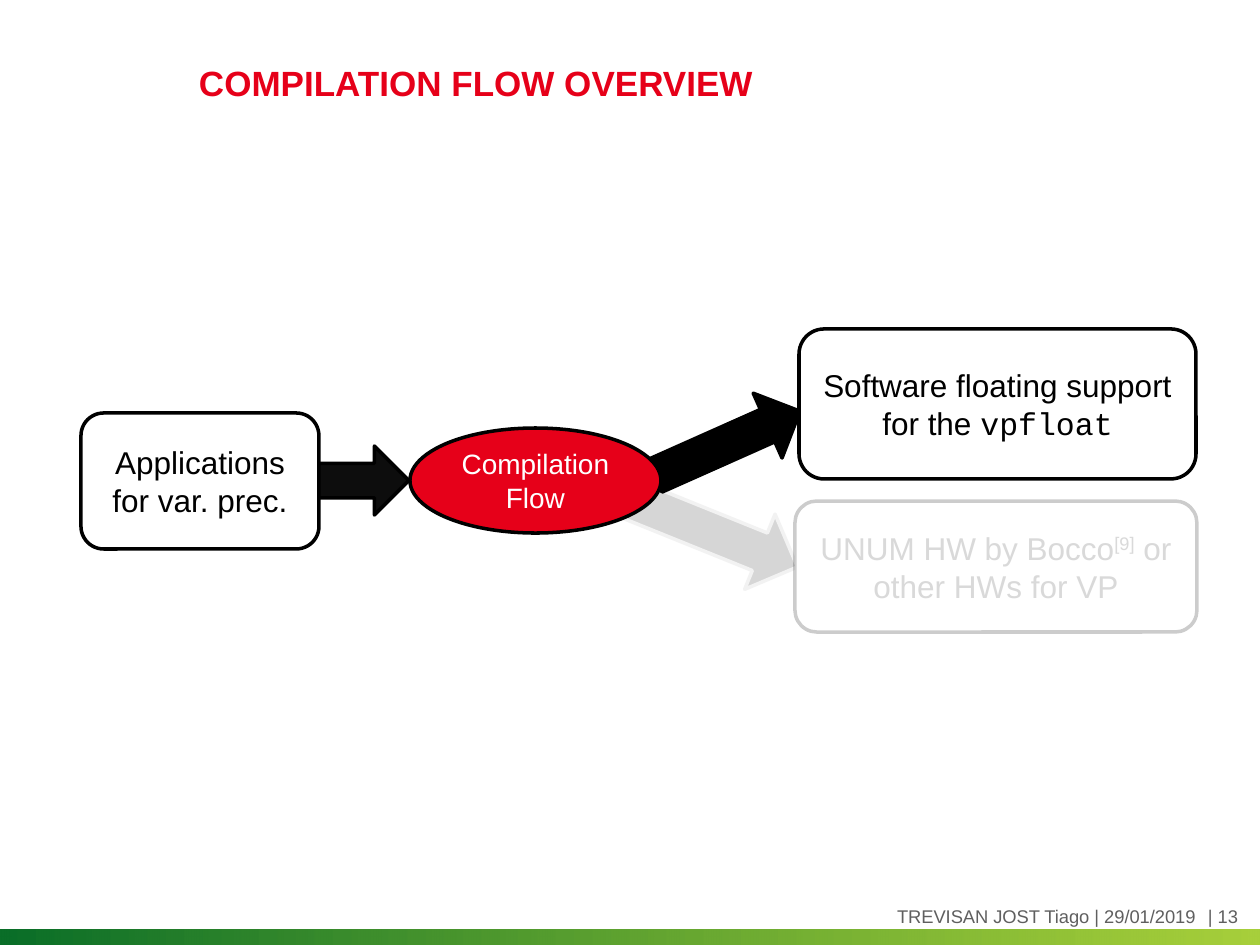
from pptx import Presentation
from pptx.dml.color import RGBColor
from pptx.enum.shapes import MSO_SHAPE as Shape
from pptx.enum.text import MSO_ANCHOR as Anchor, PP_ALIGN as Align
from pptx.oxml.ns import qn
from pptx.util import Emu, Pt
from lxml.etree import SubElement

EMU_PER_PX = 914400 / 126
BLACK, WHITE, RED = "000000", "FFFFFF", "E60019"
PALE, FOOTER_GREY = "D9D9D9", "5F5F5F"


def px(length):
    return Emu(round(length * EMU_PER_PX))


def rgb(value):
    return RGBColor.from_string(value)


def set_alpha(parent, percent):
    """Make the last colour under parent partly transparent."""
    colour = list(parent.iter(qn("a:srgbClr")))[-1]
    SubElement(colour, qn("a:alpha")).set("val", str(percent * 1000))


def write(frame, spans, align=Align.LEFT, **base):
    """Fill a text frame with one paragraph of (text, format) spans."""
    frame.word_wrap = True
    frame.vertical_anchor = Anchor.MIDDLE
    para = frame.paragraphs[0]
    para.alignment = align
    for text, extra in spans:
        span = para.add_run()
        span.text = text
        values = {"name": "Arial", **base, **extra}
        span.font.color.rgb = rgb(values.pop("color"))
        raised = values.pop("raised", None)
        for name, value in values.items():
            setattr(span.font, name, value)
        if raised:
            span.font._element.set("baseline", str(raised * 1000))


def add_label(page, place, text, **values):
    box = page.shapes.add_textbox(*map(px, place))
    frame = box.text_frame
    for side in ("left", "right", "top", "bottom"):
        setattr(frame, f"margin_{side}", 0)
    write(frame, [(text, {})], **values)


def add_node(page, kind, place, fill, line=BLACK, rotation=0,
             fill_alpha=None, line_alpha=None):
    node = page.shapes.add_shape(kind, *map(px, place))
    node.shadow.inherit = False
    node.rotation = rotation
    node.fill.solid()
    node.fill.fore_color.rgb = rgb(fill)
    if fill_alpha:
        set_alpha(node._element.spPr, fill_alpha)
    node.line.color.rgb = rgb(line)
    node.line.width = Pt(2)
    if line_alpha:
        set_alpha(node._element.spPr, line_alpha)
    return node


def add_text_node(page, kind, place, spans, fill=WHITE, size=18,
                  color=BLACK, line_alpha=None):
    node = add_node(page, kind, place, fill, line_alpha=line_alpha)
    write(node.text_frame, spans, Align.CENTER, size=Pt(size), color=color)


def add_bottom_bar(page):
    bar = page.shapes.add_shape(Shape.RECTANGLE, *map(px, (0, 930, 1260, 15)))
    bar.shadow.inherit = False
    bar.line.fill.background()
    bar.fill.gradient()
    bar.fill.gradient_angle = 0
    for stop, colour in zip(bar.fill.gradient_stops, ("0A6E28", "91C30A")):
        stop.color.rgb = rgb(colour)
    set_alpha(bar._element.spPr, 80)


def main():
    deck = Presentation()
    deck.slide_width, deck.slide_height = px(1260), px(945)
    page = deck.slides.add_slide(deck.slide_layouts[6])

    # Footer
    add_bottom_bar(page)
    footer = {"size": Pt(10.5), "color": FOOTER_GREY}
    add_label(page, (1208, 905, 52, 23), "| 13", **footer)
    add_label(page, (0, 905, 1196, 23), "TREVISAN JOST Tiago | 29/01/2019",
              align=Align.RIGHT, **footer)

    # Title
    add_label(page, (199, 29, 1011, 107), "COMPILATION FLOW OVERVIEW",
              size=Pt(20), color=RED, bold=True)

    # Arrows, behind the nodes they join
    add_node(page, Shape.DOWN_ARROW, (668, 435, 81, 192), BLACK, "F2F2F2",
             rotation=292, fill_alpha=16)
    add_node(page, Shape.DOWN_ARROW, (329, 435, 69, 91), "0D0D0D",
             rotation=270)
    add_node(page, Shape.DOWN_ARROW, (692, 364, 71, 159), BLACK, rotation=246)

    # Flow: input, compiler, two targets
    add_text_node(page, Shape.ROUNDED_RECTANGLE, (81, 413, 238, 136),
                  [("Applications for var. prec.", {})])
    add_text_node(page, Shape.OVAL, (410, 428, 251, 105),
                  [("Compilation Flow", {})], fill=RED, size=16, color=WHITE)
    add_text_node(page, Shape.ROUNDED_RECTANGLE, (799, 329, 397, 150),
                  [("Software floating support for the ", {}),
                   ("vpfloat", {"name": "Courier New"})])
    add_text_node(page, Shape.ROUNDED_RECTANGLE, (795, 501, 402, 131),
                  [("UNUM HW by Bocco", {}), ("[9]", {"raised": 30}),
                   (" or other HWs for VP", {})],
                  color=PALE, line_alpha=20)

    deck.save("out.pptx")


if __name__ == "__main__":
    main()
